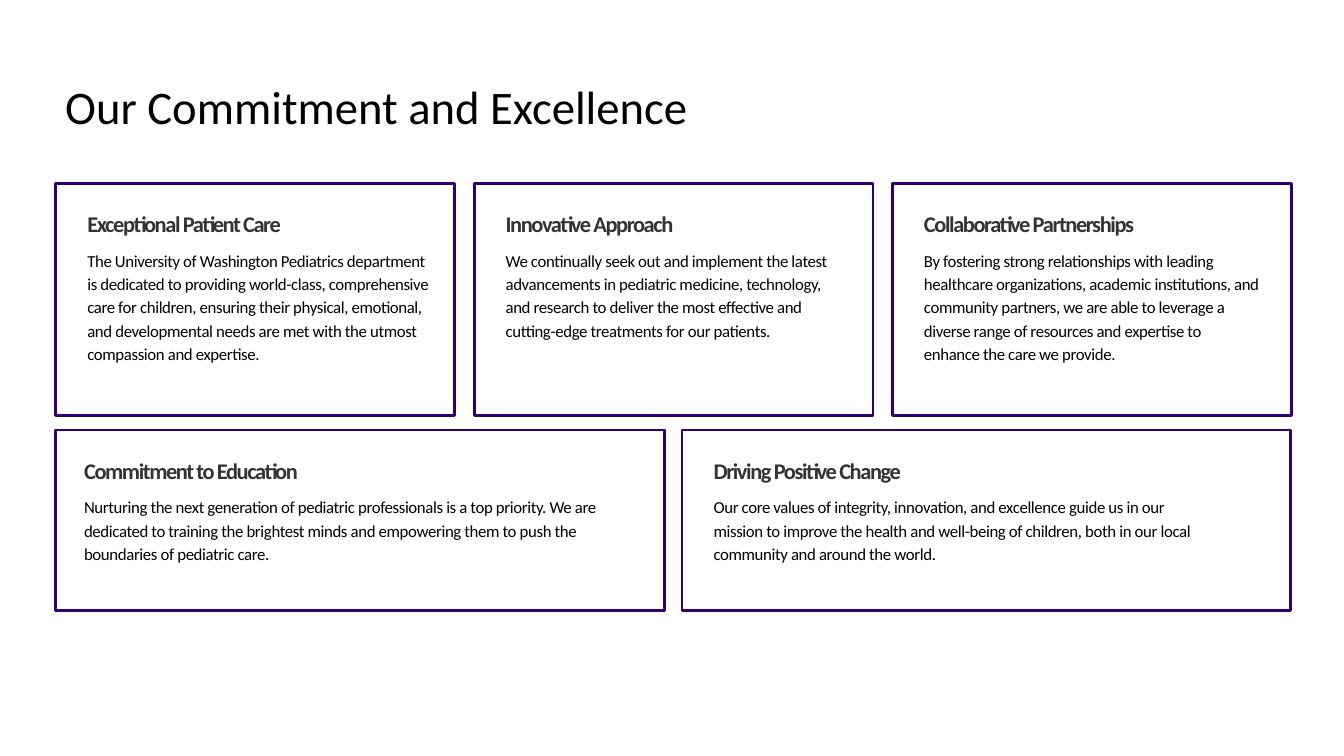
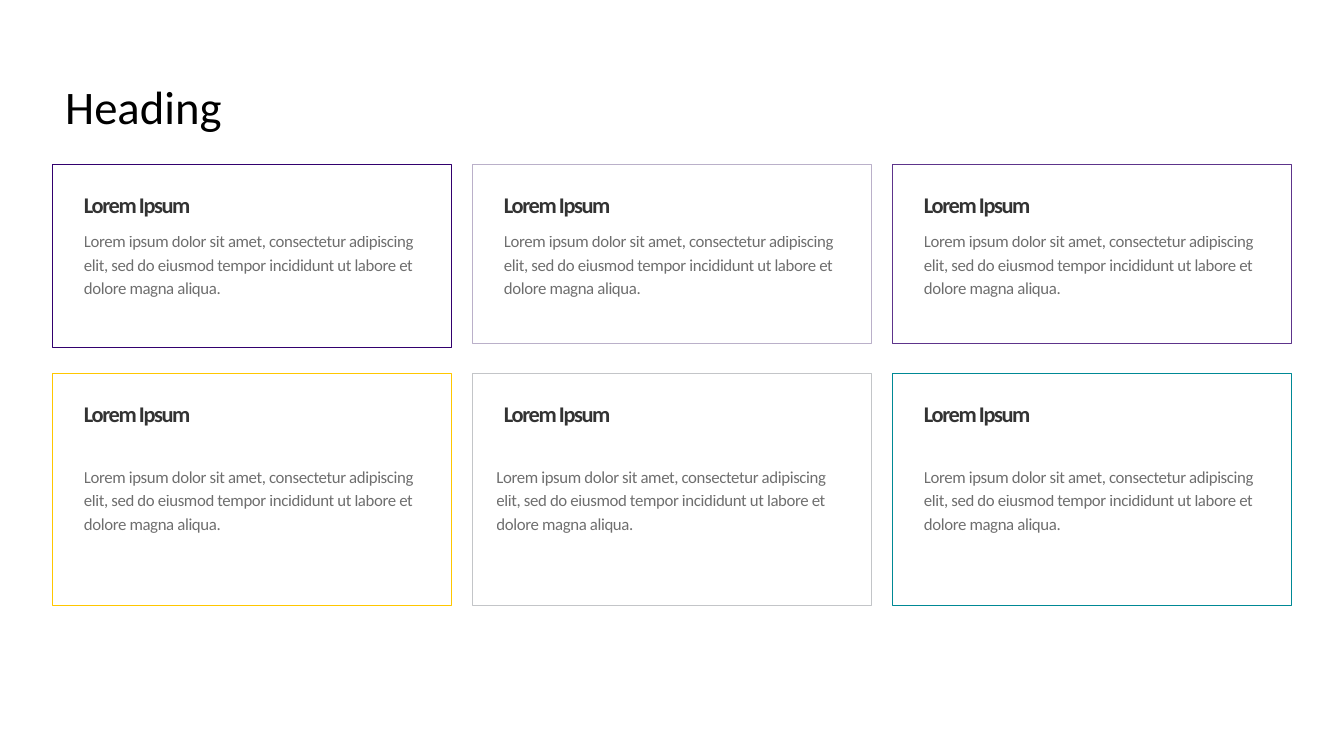
from dataclasses import dataclass

from lxml import etree
from pptx import Presentation
from pptx.dml.color import RGBColor
from pptx.enum import shapes, text
from pptx.oxml.ns import qn
from pptx.util import Pt


@dataclass(frozen=True)
class Theme:
    """Colours, type sizes and line weights of the deck."""
    font: str = "Calibri"
    paper: str = "FFFFFF"
    ink: str = "000000"
    head: str = "333333"
    purple: str = "32006E"
    rims: tuple = ("32006E", "BAB0C9", "5D348B", "FFC700", "C3C5C8", "008995")
    title_size: float = 50
    head_size: float = 24
    body_size: float = 18
    head_step: float = 29
    body_step: float = 25
    bold_rim: float = 3
    thin_rim: float = 0.75
    soft: int = 56


THEME = Theme()
CARD_W, CARD_H = 427.5, 249
INSET = 33.75
HEAD_DROP, BODY_DROP, LOW_DROP = 28.8, 68.4, 97.2

CARE = [
    ("Exceptional Patient Care",
     "The University of Washington Pediatrics department is dedicated to "
     "providing world-class, comprehensive care for children, ensuring their "
     "physical, emotional, and developmental needs are met with the utmost "
     "compassion and expertise.", 372, 5),
    ("Innovative Approach",
     "We continually seek out and implement the latest advancements in "
     "pediatric medicine, technology, and research to deliver the most "
     "effective and cutting-edge treatments for our patients.", 348.5, 4),
    ("Collaborative Partnerships",
     "By fostering strong relationships with leading healthcare "
     "organizations, academic institutions, and community partners, we are "
     "able to leverage a diverse range of resources and expertise to enhance "
     "the care we provide.", 360, 5),
]
GOALS = [
    ("Commitment to Education",
     "Nurturing the next generation of pediatric professionals is a top "
     "priority. We are dedicated to training the brightest minds and "
     "empowering them to push the boundaries of pediatric care.", 593, 3, 30.25),
    ("Driving Positive Change",
     "Our core values of integrity, innovation, and excellence guide us in "
     "our mission to improve the health and well-being of children, both in "
     "our local community and around the world.", 537, 3, INSET),
]
LOREM = ("Lorem Ipsum",
         "Lorem ipsum dolor sit amet, consectetur adipiscing elit, sed do "
         "eiusmod tempor incididunt ut labore et dolore magna aliqua.", 366, 3)


def rgb(code):
    """Turn a hex code into a colour."""
    return RGBColor.from_string(code)


def style(para, size, color, bold=False, track=0, alpha=100):
    """Set the font of a whole paragraph."""
    font = para.font
    font.name, font.size, font.bold = THEME.font, Pt(size), bold
    font.color.rgb = rgb(color)
    props = para._p.pPr.find(qn("a:defRPr"))
    if track:
        props.set("spc", str(round(track * 100)))
    if alpha < 100:
        tint = props.find(".//" + qn("a:srgbClr"))
        etree.SubElement(tint, qn("a:alpha")).set("val", str(alpha * 1000))


def frame(box, pad):
    """Give a box wrapped text with even margins and return its frame."""
    body = box.text_frame
    body.word_wrap = True
    body.margin_left = body.margin_right = Pt(pad)
    body.margin_top = body.margin_bottom = Pt(pad)
    return body


def new_slide(deck, words):
    """Add a slide with its title in place."""
    slide = deck.slides.add_slide(deck.slide_layouts[5])
    title = slide.shapes.title
    title.left, title.top = Pt(66.25), Pt(85.75)
    title.width, title.height = Pt(1242), Pt(62)
    body = frame(title, 3.6)
    body.auto_size = text.MSO_AUTO_SIZE.NONE
    body.vertical_anchor = text.MSO_ANCHOR.MIDDLE
    body.text = words
    para = body.paragraphs[0]
    para.alignment = text.PP_ALIGN.LEFT
    para.line_spacing = 0.9
    style(para, THEME.title_size, THEME.ink)
    return slide


def add_text(slide, words, x, y, w, step, lines=1, **look):
    """Add a text box with fixed line height."""
    box = slide.shapes.add_textbox(Pt(x), Pt(y), Pt(w), Pt(step * lines))
    body = frame(box, 0)
    body.auto_size = text.MSO_AUTO_SIZE.SHAPE_TO_FIT_TEXT
    body.text = words
    para = body.paragraphs[0]
    para.line_spacing = Pt(step)
    style(para, **look)


def add_card(slide, item, x, y, w, h, rim, weight, inset=INSET,
             drop=BODY_DROP, shift=0, alpha=100):
    """Add a framed card with a heading and body text."""
    head, words, wide, lines = item
    rect = slide.shapes.add_shape(
        shapes.MSO_SHAPE.RECTANGLE, Pt(x), Pt(y), Pt(w), Pt(h))
    rect.shadow.inherit = False
    rect.fill.solid()
    rect.fill.fore_color.rgb = rgb(THEME.paper)
    rect.line.color.rgb = rgb(rim)
    rect.line.width = Pt(weight)
    left = x + inset
    add_text(slide, head, left, y + HEAD_DROP, 408, THEME.head_step,
             size=THEME.head_size, color=THEME.head, bold=True, track=-1.5)
    add_text(slide, words, left + shift, y + drop, wide, THEME.body_step, lines,
             size=THEME.body_size, color=THEME.ink, track=-0.4, alpha=alpha)


def add_values(deck):
    """Build the slide with three cards over two."""
    slide = new_slide(deck, "Our Commitment and Excellence")
    rim = THEME.purple, THEME.bold_rim
    for col, item in enumerate(CARE):
        add_card(slide, item, 59.8 + 448.2 * col, 196.5, CARD_W, CARD_H, *rim)
    for col, (*item, inset) in enumerate(GOALS):
        add_card(slide, item, 59.8 + 671 * col, 460.8, 652.3, 193, *rim, inset)


def add_grid(deck):
    """Build the slide with two rows of three cards."""
    slide = new_slide(deck, "Heading")
    rows = [(175.7, (196, 192.25, 192.25), BODY_DROP, (0, 0, 0)),
            (399.6, (CARD_H,) * 3, LOW_DROP, (0, -8, 0))]
    for row, (y, highs, drop, shifts) in enumerate(rows):
        rims = THEME.rims[row * 3:row * 3 + 3]
        for col, (rim, high, shift) in enumerate(zip(rims, highs, shifts)):
            add_card(slide, LOREM, 56.2 + 450 * col, y, CARD_W, high, rim,
                     THEME.thin_rim, drop=drop, shift=shift, alpha=THEME.soft)


def main():
    """Build and save the deck."""
    deck = Presentation()
    deck.slide_width, deck.slide_height = Pt(1440), Pt(810)
    add_values(deck)
    add_grid(deck)
    deck.save("out.pptx")


if __name__ == "__main__":
    main()
